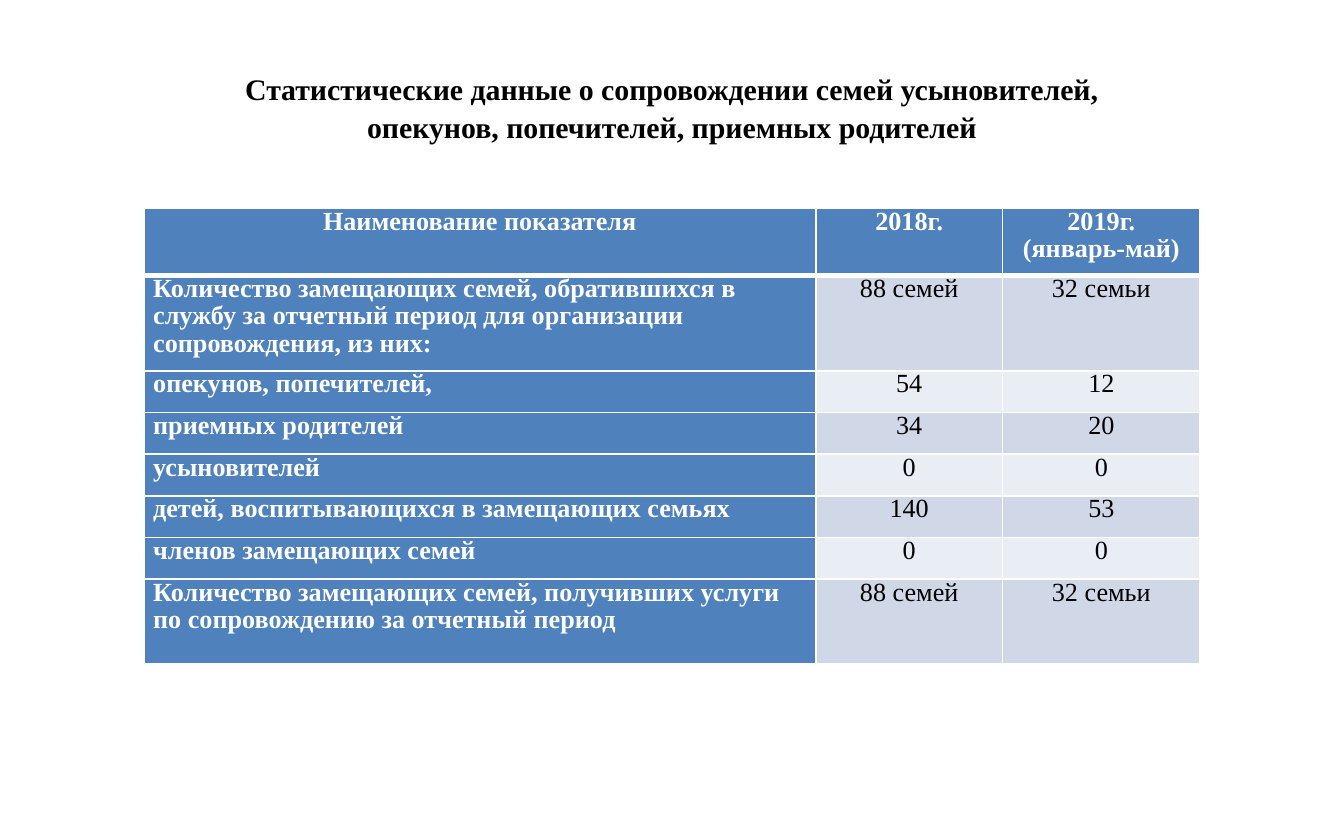
from dataclasses import dataclass

from lxml.etree import SubElement
from pptx import Presentation
from pptx.dml.color import RGBColor
from pptx.enum.text import MSO_ANCHOR, PP_ALIGN
from pptx.oxml.ns import qn
from pptx.util import Inches, Pt


@dataclass(frozen=True)
class Theme:
    font: str = "Times New Roman"
    title_size: int = 16
    table_size: int = 14
    black: str = "000000"
    white: str = "FFFFFF"
    blue: str = "4F81BD"
    bands: tuple = ("E9EDF4", "D0D8E8")


theme = Theme()


def format_paragraph(paragraph, alignment, size, color, bold, line_spacing):
    paragraph.alignment = alignment
    paragraph.line_spacing = line_spacing
    for run in paragraph.runs:
        run.font.name = theme.font
        run.font.size = Pt(size)
        run.font.bold = bold
        run.font.color.rgb = RGBColor.from_string(color)


def add_borders(cell, top, bottom):
    """Draw white cell borders; top and bottom are widths in points."""
    properties = cell._tc.get_or_add_tcPr()
    for side, width in (("L", 1), ("R", 1), ("T", top), ("B", bottom)):
        line = SubElement(properties, qn(f"a:ln{side}"), w=str(Pt(width)))
        fill = SubElement(line, qn("a:solidFill"))
        SubElement(fill, qn("a:srgbClr"), val=theme.white)


presentation = Presentation()
presentation.slide_width = Inches(10)
presentation.slide_height = Inches(6.25)
slide = presentation.slides.add_slide(presentation.slide_layouts[6])

# Title
title = slide.shapes.add_textbox(Inches(0.5), Inches(0.45), Inches(9), Inches(0.94))
text_frame = title.text_frame
text_frame.word_wrap = True
text_frame.vertical_anchor = MSO_ANCHOR.MIDDLE
text_frame.margin_left = text_frame.margin_right = Inches(0.08)
text_frame.margin_top = Inches(0.04)
text_frame.margin_bottom = Inches(0.29)
paragraph = text_frame.paragraphs[0]
paragraph.text = (
    "Статистические данные о сопровождении семей усыновителей,\v"
    "опекунов, попечителей, приемных родителей"
)
format_paragraph(paragraph, PP_ALIGN.CENTER, theme.title_size, theme.black, True, 1.05)

# Statistics table
rows = [
    ("Наименование показателя", "2018г.", "2019г.\n(январь-май)"),
    ("Количество замещающих семей, обратившихся в службу за отчетный период "
     "для организации сопровождения, из них:", "88 семей", "32 семьи"),
    ("опекунов, попечителей,", "54", "12"),
    ("приемных родителей", "34", "20"),
    ("усыновителей", "0", "0"),
    ("детей, воспитывающихся в замещающих семьях", "140", "53"),
    ("членов замещающих семей", "0", "0"),
    ("Количество замещающих семей, получивших услуги по сопровождению "
     "за отчетный период", "88 семей", "32 семьи"),
]
column_widths = [5, 1.39, 1.47]
row_heights = [0.5, 0.71] + [0.31] * 5 + [0.63]

table = slide.shapes.add_table(
    len(rows), len(column_widths), Inches(1.07), Inches(1.55),
    Inches(sum(column_widths)), Inches(sum(row_heights)),
).table
table.first_col = True
for column, width in zip(table.columns, column_widths):
    column.width = Inches(width)

for row_index, (values, height) in enumerate(zip(rows, row_heights)):
    table.rows[row_index].height = Inches(height)
    for column_index, value in enumerate(values):
        is_header = row_index == 0 or column_index == 0
        is_row_label = row_index > 0 and column_index == 0
        cell = table.cell(row_index, column_index)
        cell.margin_left = cell.margin_right = Inches(0.07)
        cell.margin_top = cell.margin_bottom = 0
        add_borders(cell, top=3 if row_index == 1 else 1, bottom=3 if row_index == 0 else 1)
        cell.fill.solid()
        cell.fill.fore_color.rgb = RGBColor.from_string(
            theme.blue if is_header else theme.bands[row_index % 2]
        )
        cell.text_frame.text = value
        for paragraph in cell.text_frame.paragraphs:
            format_paragraph(
                paragraph,
                PP_ALIGN.LEFT if is_row_label else PP_ALIGN.CENTER,
                theme.table_size,
                theme.white if is_header else theme.black,
                is_header,
                0.95,
            )

presentation.save("out.pptx")
